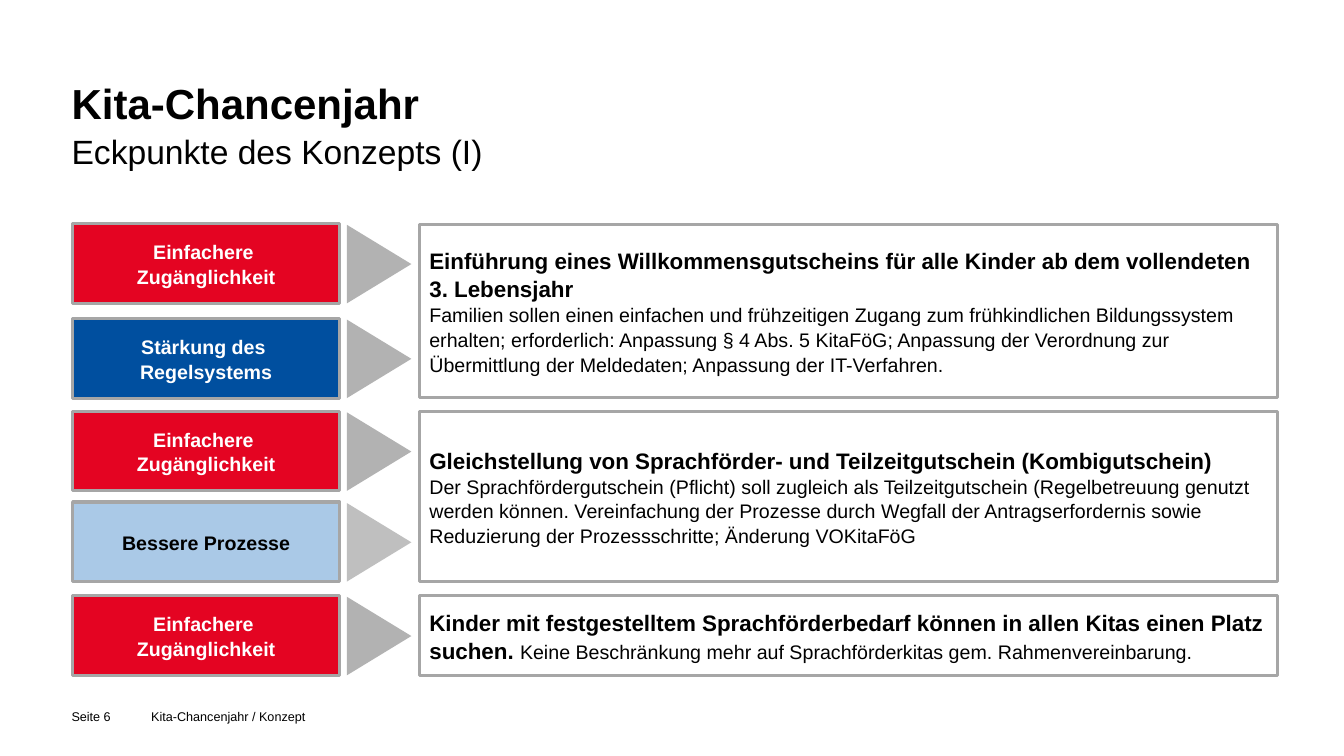
from dataclasses import dataclass

import pptx
import pptx.dml.color
import pptx.enum.shapes
import pptx.enum.text
import pptx.util
from pptx.util import Inches


@dataclass(frozen=True)
class Theme:
    font: str = "Arial"
    black: str = "000000"
    white: str = "FFFFFF"
    red: str = "E40422"
    blue: str = "004F9F"
    light_blue: str = "AAC9E7"
    border: str = "A6A6A6"
    arrow: str = "B2B2B2"
    light_arrow: str = "BFBFBF"
    title: int = 30
    subtitle: int = 24
    heading: int = 16
    body: int = 14
    footer: int = 9
    border_width: float = 2.25
    title_spacing: float = 1.08
    box_spacing: float = 1.05


THEME = Theme()

# Shared geometry in inches
LABEL_LEFT, LABEL_WIDTH, ROW_HEIGHT = 0.72, 2.65, 0.79
ARROW_LEFT, ARROW_WIDTH, ARROW_HEIGHT, ARROW_OFFSET = 3.37, 0.78, 0.64, 0.08
DETAIL_LEFT, DETAIL_WIDTH = 4.16, 8.51

ACCESS = "Einfachere \nZugänglichkeit"

# Label rows: top, text, fill, text colour, arrow colour
LABELS = [
    (2.22, ACCESS, THEME.red, THEME.white, THEME.arrow),
    (3.16, "Stärkung des \nRegelsystems", THEME.blue, THEME.white, THEME.arrow),
    (4.08, ACCESS, THEME.red, THEME.white, THEME.arrow),
    (4.98, "Bessere Prozesse", THEME.light_blue, THEME.black, THEME.light_arrow),
    (5.91, ACCESS, THEME.red, THEME.white, THEME.arrow),
]

# Detail boxes: top, height, paragraphs made of (text, size, bold) runs
DETAILS = [
    (2.23, 1.71, [
        [("Einführung eines Willkommensgutscheins für alle Kinder ab dem "
          "vollendeten \n3. Lebensjahr", THEME.heading, True)],
        [("Familien sollen einen einfachen und frühzeitigen Zugang zum "
          "frühkindlichen Bildungssystem erhalten; erforderlich: Anpassung "
          "§ 4 Abs. 5 KitaFöG; Anpassung der Verordnung zur Übermittlung der "
          "Meldedaten; Anpassung der IT-Verfahren.", THEME.body, False)],
    ]),
    (4.08, 1.69, [
        [("Gleichstellung von Sprachförder- und Teilzeitgutschein "
          "(Kombigutschein)", THEME.heading, True)],
        [("Der Sprachfördergutschein (Pflicht) soll zugleich als "
          "Teilzeitgutschein (Regelbetreuung genutzt \nwerden können. "
          "Vereinfachung der Prozesse durch Wegfall der Antragserfordernis "
          "sowie Reduzierung der Prozessschritte; Änderung VOKitaFöG",
          THEME.body, False)],
    ]),
    (5.91, ROW_HEIGHT, [
        [("Kinder mit festgestelltem Sprachförderbedarf können in allen Kitas "
          "einen Platz suchen. ", THEME.heading, True),
         ("Keine Beschränkung mehr auf Sprachförderkitas gem. "
          "Rahmenvereinbarung.", THEME.body, False)],
    ]),
]


def rgb(value):
    return pptx.dml.color.RGBColor.from_string(value)


def add_run(paragraph, text, size, bold, color):
    """Add text to a paragraph, turning each newline into a line break."""
    for index, line in enumerate(text.split("\n")):
        if index:
            paragraph.add_line_break()
        if line:
            run = paragraph.add_run()
            run.text = line
            run.font.name = THEME.font
            run.font.size = pptx.util.Pt(size)
            run.font.bold = bold
            run.font.color.rgb = rgb(color)


def fill_text(text_frame, paragraphs, color, alignment, spacing):
    text_frame.word_wrap = True
    for index, runs in enumerate(paragraphs):
        paragraph = text_frame.add_paragraph() if index else text_frame.paragraphs[0]
        paragraph.alignment = alignment
        paragraph.line_spacing = spacing
        for text, size, bold in runs:
            add_run(paragraph, text, size, bold, color)


def add_text(slide, left, top, width, height, paragraphs, spacing=1.0):
    box = slide.shapes.add_textbox(
        Inches(left), Inches(top), Inches(width), Inches(height))
    frame = box.text_frame
    frame.margin_left = frame.margin_right = 0
    frame.margin_top = frame.margin_bottom = 0
    fill_text(frame, paragraphs, THEME.black,
              pptx.enum.text.PP_ALIGN.LEFT, spacing)


def add_box(slide, left, top, width, height, fill, paragraphs, color, alignment):
    shape = slide.shapes.add_shape(
        pptx.enum.shapes.MSO_SHAPE.RECTANGLE,
        Inches(left), Inches(top), Inches(width), Inches(height))
    shape.shadow.inherit = False
    shape.fill.solid()
    shape.fill.fore_color.rgb = rgb(fill)
    shape.line.color.rgb = rgb(THEME.border)
    shape.line.width = pptx.util.Pt(THEME.border_width)
    shape.text_frame.vertical_anchor = pptx.enum.text.MSO_ANCHOR.MIDDLE
    fill_text(shape.text_frame, paragraphs, color, alignment, THEME.box_spacing)


def add_arrow(slide, top, color):
    shape = slide.shapes.add_shape(
        pptx.enum.shapes.MSO_SHAPE.ISOSCELES_TRIANGLE,
        Inches(ARROW_LEFT), Inches(top), Inches(ARROW_WIDTH), Inches(ARROW_HEIGHT))
    shape.rotation = 90
    shape.shadow.inherit = False
    shape.fill.solid()
    shape.fill.fore_color.rgb = rgb(color)
    shape.line.fill.background()


def main():
    presentation = pptx.Presentation()
    presentation.slide_width = Inches(13.33)
    presentation.slide_height = Inches(7.5)
    slide = presentation.slides.add_slide(presentation.slide_layouts[6])

    # Title and subtitle
    add_text(slide, 0.71, 0.73, 11.91, 1.18, [[
        ("Kita-Chancenjahr\n", THEME.title, True),
        ("Eckpunkte des Konzepts (I)", THEME.subtitle, False),
    ]], THEME.title_spacing)

    # Goals with their arrows
    for top, text, fill, color, arrow_color in LABELS:
        add_box(slide, LABEL_LEFT, top, LABEL_WIDTH, ROW_HEIGHT, fill,
                [[(text, THEME.body, True)]], color,
                pptx.enum.text.PP_ALIGN.CENTER)
        add_arrow(slide, top + ARROW_OFFSET, arrow_color)

    # Measures
    for top, height, paragraphs in DETAILS:
        add_box(slide, DETAIL_LEFT, top, DETAIL_WIDTH, height, THEME.white,
                paragraphs, THEME.black, pptx.enum.text.PP_ALIGN.LEFT)

    # Footer
    for left, width, text in [(0.71, 0.7, "Seite 6"),
                              (1.5, 9.43, "Kita-Chancenjahr / Konzept")]:
        add_text(slide, left, 7.03, width, 0.21, [[(text, THEME.footer, False)]])

    presentation.save("out.pptx")


if __name__ == "__main__":
    main()
